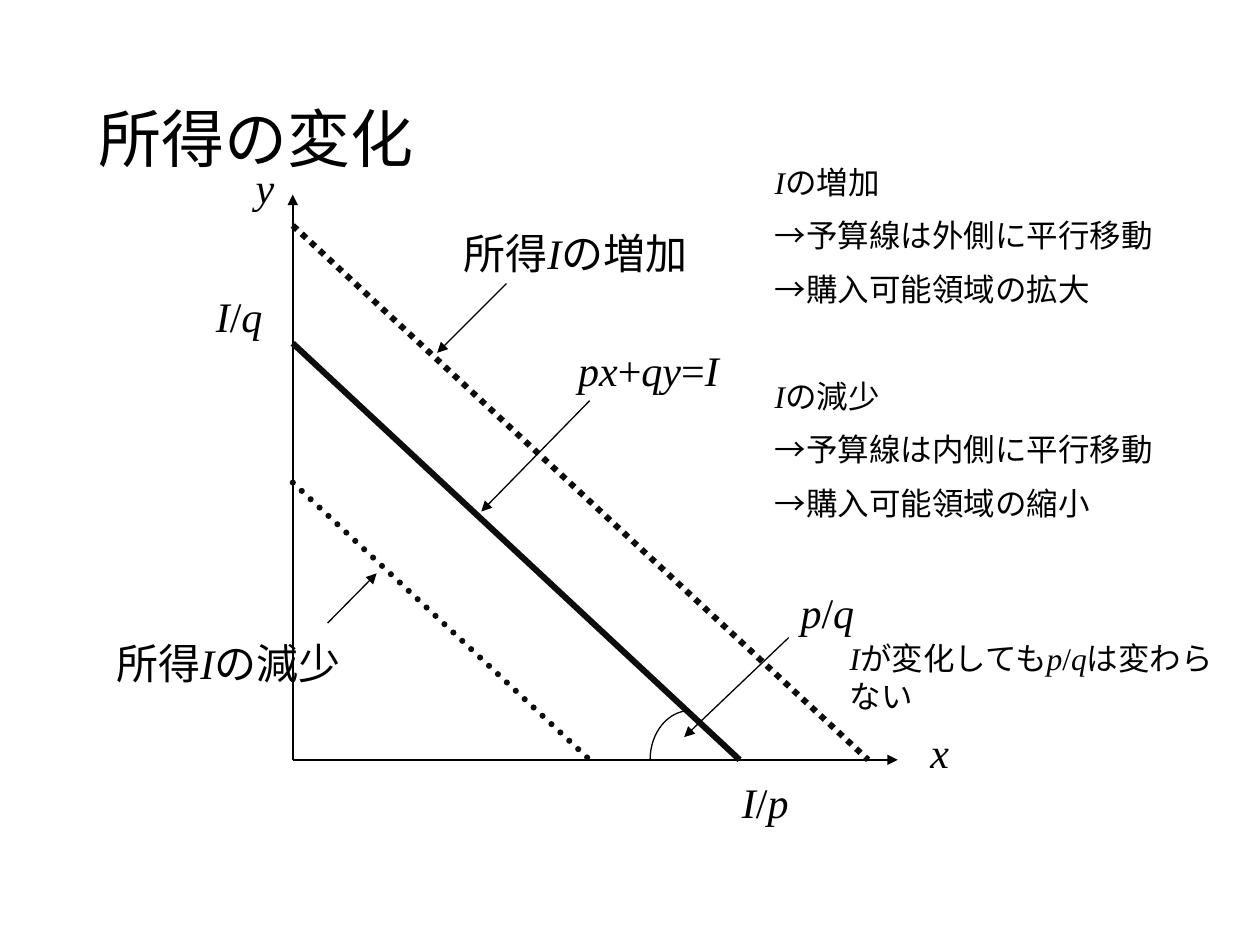
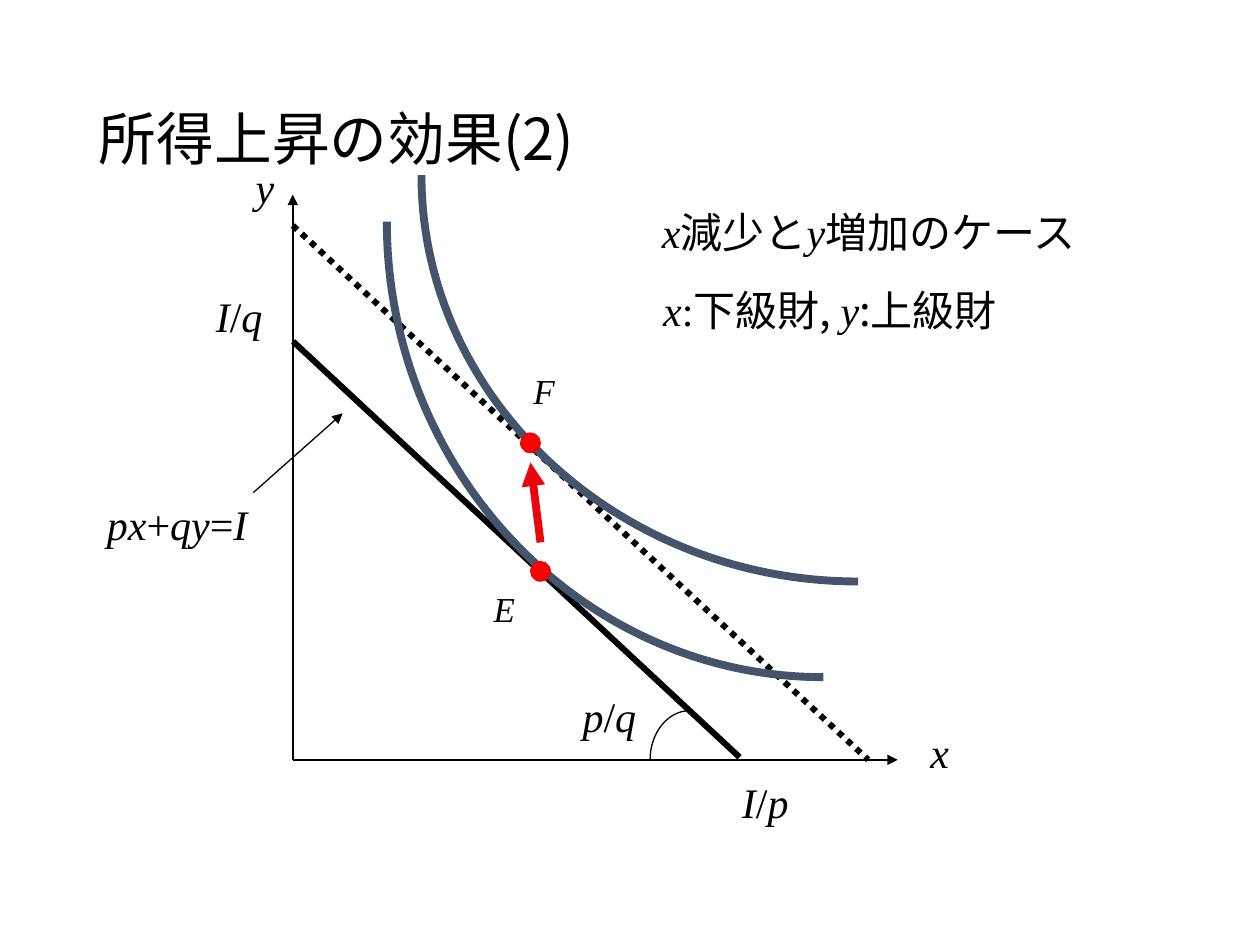
from dataclasses import dataclass

import lxml.etree
import pptx
import pptx.dml.color
import pptx.enum.dml
import pptx.enum.shapes
import pptx.enum.text
import pptx.oxml.ns
import pptx.util


@dataclass(frozen=True)
class Theme:
    black: str = "000000"
    soft_black: str = "0D0D0D"
    curve: str = "44546A"
    red: str = "FF0000"
    dark_red: str = "E8060B"
    latin: str = "Times New Roman"
    japanese: str = "Noto Sans CJK JP"
    title: int = 36
    long_title: int = 33
    label: int = 24
    point: int = 20
    note: int = 18
    hairline: float = 0.75
    axis: float = 1.25
    budget: float = 3.5
    bold: float = 4.5


theme = Theme()
rgb = pptx.dml.color.RGBColor.from_string
qn = pptx.oxml.ns.qn

deck = pptx.Presentation()
deck.slide_width = pptx.util.Inches(10)
deck.slide_height = pptx.util.Inches(7.5)
cell = deck.slide_width / 100  # square grid: 100 columns by 75 rows


def add_text(page, area, paragraphs, size, gaps=()):
    """Write paragraphs in a box; parts between asterisks are italic."""
    box = page.shapes.add_textbox(*(round(n * cell) for n in area))
    frame = box.text_frame
    frame.word_wrap = True
    for index, text in enumerate(paragraphs):
        para = frame.add_paragraph() if index else frame.paragraphs[0]
        para.font.size = pptx.util.Pt(size)
        para.font.color.rgb = rgb(theme.black)
        if index:
            para.space_before = pptx.util.Pt(gaps[index - 1])
        for number, part in enumerate(text.split("*")):
            if not part:
                continue
            span = para.add_run()
            span.text = part
            span.font.italic = number % 2 == 1
            span.font.name = theme.latin if part.isascii() else theme.japanese
            east_asian = lxml.etree.SubElement(span.font._element, qn("a:ea"))
            east_asian.set("typeface", theme.japanese)
    return frame


def add_line(page, start, end, color, weight, arrow=False, dotted=False, cap="flat"):
    connector = page.shapes.add_connector(
        pptx.enum.shapes.MSO_CONNECTOR.STRAIGHT,
        *(round(n * cell) for n in (*start, *end)))
    connector.line.color.rgb = rgb(color)
    connector.line.width = pptx.util.Pt(weight)
    if dotted:
        connector.line.dash_style = pptx.enum.dml.MSO_LINE.ROUND_DOT
    outline = connector.line._get_or_add_ln()
    outline.set("cap", cap)
    if arrow:
        lxml.etree.SubElement(outline, qn("a:tailEnd")).set("type", "triangle")
    lxml.etree.SubElement(connector._element.spPr, qn("a:effectLst"))


origin = (23.24, 60.3)
angle_arc = ((54.75, 60.3), 3.15, -3.9, theme.black, theme.hairline)

slides = [
    {
        "title": ("所得の変化", theme.title),
        "ink": theme.soft_black,
        "budget": ((23.24, 27.25), (58.7, 60.3)),
        "lower": ((23.24, 38.3), (46.85, 60.35)),
        "pointers": [
            ((46.8, 31.8), (38.2, 40.6)),
            ((62.6, 50.6), (54.3, 58.5)),
            ((40.2, 22.5), (34.7, 28)),
            ((26, 49.45), (29.9, 45.5)),
        ],
        "arcs": [angle_arc],
        "labels": [
            ((44.9, 26.85, 14.2, 5), "*px*+*qy*=*I*", theme.label),
            ((62.55, 46.05, 7.1, 5), "*p*/*q*", theme.label),
            ((35.8, 17.55, 22, 5), "所得*I*の増加", theme.label),
            ((8.25, 50.1, 22, 5), "所得*I*の減少", theme.label),
            ((66.45, 50.2, 31.5, 7.1), "*I*が変化しても*p*/*q*は変わらない", theme.note),
        ],
    },
    {
        "title": ("所得上昇の効果(2)", theme.long_title),
        "ink": theme.black,
        "budget": ((23.26, 27.1), (58.7, 60.1)),
        "pointers": [((20.1, 39.1), (27.2, 32.8))],
        "arcs": [
            angle_arc,
            ((65.35, 17.6), 34.65, 36.15, theme.curve, theme.bold),
            ((68.1, 13.9), 34.65, 32.25, theme.curve, theme.bold),
        ],
        "dots": [(42.9, 45.35), (42.1, 35.15)],
        "labels": [
            ((7.5, 39.1, 14.2, 5), "*px*+*qy*=*I*", theme.label),
            ((45.25, 54.35, 7.1, 5), "*p*/*q*", theme.label),
            ((38.2, 46.15, 3.2, 4.3), "*E*", theme.point),
            ((41.35, 28.8, 4.7, 4.3), "*F*", theme.point),
            ((51.55, 15.9, 40.2, 5), "*x*減少と*y*増加のケース", theme.label),
            ((51.65, 22.1, 33.4, 5), "*x*:**下級財, *y*:上級財", theme.label),
        ],
    },
]

axis_labels = [
    ((72.85, 57.2, 3.9, 5), "*x*", theme.label),
    ((19.3, 12.3, 3.1, 5), "*y*", theme.label),
    ((57.9, 61.1, 6.3, 5), "*I*/*p*", theme.label),
    ((16.15, 22.55, 6.3, 5), "*I*/*q*", theme.label),
]

for content in slides:
    page = deck.slides.add_slide(deck.slide_layouts[6])
    title, title_size = content["title"]
    frame = add_text(page, (6.87, 4, 86.25, 14.5), [title], title_size)
    frame.vertical_anchor = pptx.enum.text.MSO_ANCHOR.MIDDLE
    frame.paragraphs[0].line_spacing = 0.9

    for tip in ((origin[0], 15.45), (71.25, origin[1])):
        add_line(page, origin, tip, theme.black, theme.axis, arrow=True)
    add_line(page, *content["budget"], content["ink"], theme.budget)
    add_line(page, (origin[0], 17.9), (68.9, 60.3), content["ink"], theme.budget,
             dotted=True)
    if "lower" in content:
        add_line(page, *content["lower"], content["ink"], theme.budget,
                 dotted=True, cap="rnd")
    for start, end in content["pointers"]:
        add_line(page, start, end, theme.black, theme.hairline, arrow=True)

    # Each arc is the left quarter of an ellipse, below or above its centre.
    for (center_x, center_y), radius_x, radius_y, color, weight in content["arcs"]:
        builder = page.shapes.build_freeform(
            round((center_x - radius_x) * cell), round(center_y * cell))
        builder.add_line_segments(
            [(round(center_x * cell), round((center_y + radius_y) * cell))], close=False)
        arc = builder.convert_to_shape()
        segment = next(arc._element.iter(qn("a:lnTo")))
        segment.tag = qn("a:cubicBezTo")
        pull = 0.55  # handle length of a quarter ellipse, as a share of its radius
        top = max(0, -radius_y)
        handles = [(0, top + pull * radius_y), ((1 - pull) * radius_x, top + radius_y)]
        for index, (x, y) in enumerate(handles):
            handle = segment.makeelement(qn("a:pt"))
            handle.set("x", str(round(x * cell)))
            handle.set("y", str(round(y * cell)))
            segment.insert(index, handle)
        arc.shadow.inherit = False
        arc.fill.background()
        arc.line.color.rgb = rgb(color)
        arc.line.width = pptx.util.Pt(weight)

    diameter = 1.55
    for center_x, center_y in content.get("dots", []):
        area = (center_x - diameter / 2, center_y - diameter / 2, diameter, diameter)
        dot = page.shapes.add_shape(pptx.enum.shapes.MSO_SHAPE.OVAL,
                                    *(round(n * cell) for n in area))
        dot.shadow.inherit = False
        dot.fill.solid()
        dot.fill.fore_color.rgb = rgb(theme.red)
        dot.line.color.rgb = rgb(theme.dark_red)
        dot.line.width = pptx.util.Pt(theme.hairline)

    for area, text, size in axis_labels + content["labels"]:
        add_text(page, area, [text], size)

income_page, effect_page = deck.slides
add_text(income_page, (60.5, 12.43, 34.3, 31.3), [
    "*I*の増加",
    "→予算線は外側に平行移動",
    "→購入可能領域の拡大",
    "*I*の減少",
    "→予算線は内側に平行移動",
    "→購入可能領域の縮小",
], theme.note, gaps=(9, 9, 39.5, 9, 9))
add_line(effect_page, (42.9, 43.05), (42.1, 36.7), theme.dark_red, theme.bold, arrow=True)

deck.save("out.pptx")
